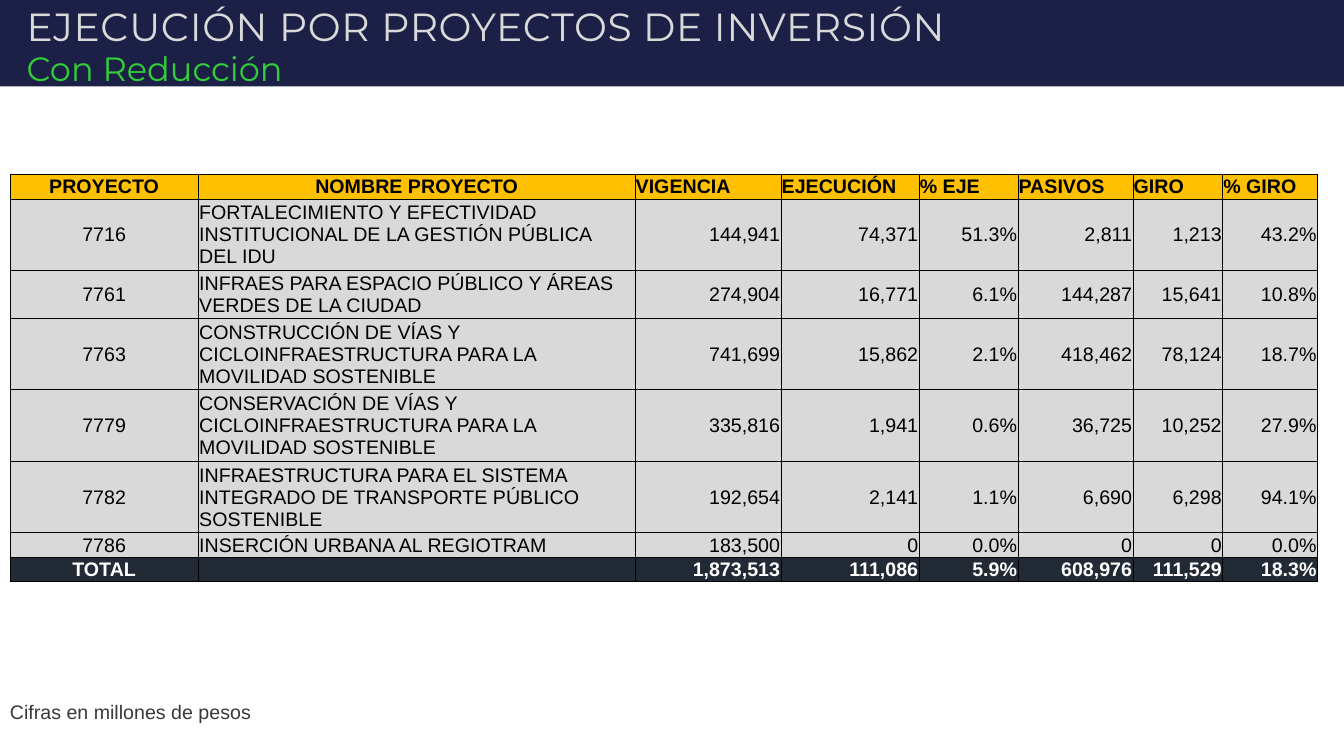
import dataclasses

import lxml.etree
import pptx
import pptx.dml.color
import pptx.enum.shapes
import pptx.enum.text
import pptx.oxml.ns
import pptx.util

Cm = pptx.util.Cm
Pt = pptx.util.Pt
qn = pptx.oxml.ns.qn
ALIGN = pptx.enum.text.PP_ALIGN
MIDDLE = pptx.enum.text.MSO_ANCHOR.MIDDLE


@dataclasses.dataclass(frozen=True)
class Theme:
    """Colours, fonts and type sizes of the slide."""
    band: str = "1C2046"
    title: str = "D9D9D9"
    subtitle: str = "31CE39"
    note: str = "3B3838"
    header_fill: str = "FFC000"
    body_fill: str = "D9D9D9"
    total_fill: str = "222A35"
    dark: str = "000000"
    light: str = "FFFFFF"
    heading_font: str = "Montserrat"
    body_font: str = "Arial"
    title_size: int = 28
    subtitle_size: int = 24
    body_size: int = 14


THEME = Theme()

COLUMN_WIDTHS = (4.75, 11, 3.68, 3.48, 2.49, 2.9, 2.26, 2.39)
ROW_LINES = (1, 3, 2, 3, 3, 3, 1, 1)
ROWS = (
    ("PROYECTO", "NOMBRE PROYECTO", "VIGENCIA", "EJECUCIÓN", "% EJE", "PASIVOS", "GIRO", "% GIRO"),
    ("7716", "FORTALECIMIENTO Y EFECTIVIDAD INSTITUCIONAL DE LA GESTIÓN PÚBLICA DEL IDU",
     "144,941", "74,371", "51.3%", "2,811", "1,213", "43.2%"),
    ("7761", "INFRAES PARA ESPACIO PÚBLICO Y ÁREAS VERDES DE LA CIUDAD",
     "274,904", "16,771", "6.1%", "144,287", "15,641", "10.8%"),
    ("7763", "CONSTRUCCIÓN DE VÍAS Y CICLOINFRAESTRUCTURA PARA LA MOVILIDAD SOSTENIBLE",
     "741,699", "15,862", "2.1%", "418,462", "78,124", "18.7%"),
    ("7779", "CONSERVACIÓN DE VÍAS Y CICLOINFRAESTRUCTURA PARA LA MOVILIDAD SOSTENIBLE",
     "335,816", "1,941", "0.6%", "36,725", "10,252", "27.9%"),
    ("7782", "INFRAESTRUCTURA PARA EL SISTEMA INTEGRADO DE TRANSPORTE PÚBLICO SOSTENIBLE",
     "192,654", "2,141", "1.1%", "6,690", "6,298", "94.1%"),
    ("7786", "INSERCIÓN URBANA AL REGIOTRAM", "183,500", "0", "0.0%", "0", "0", "0.0%"),
    ("TOTAL", "", "1,873,513", "111,086", "5.9%", "608,976", "111,529", "18.3%"),
)


def rgb(colour):
    """Turn a hex string into a colour."""
    return pptx.dml.color.RGBColor.from_string(colour)


def add_run(p, text, font, size, colour, bold=False):
    """Add one formatted run to a paragraph."""
    r = p.add_run()
    r.text = text
    r.font.name = font
    r.font.size = Pt(size)
    r.font.bold = bold
    r.font.color.rgb = rgb(colour)
    return r


def add_band(slide, width, height):
    """Draw the dark band across the top."""
    sp = slide.shapes.add_shape(pptx.enum.shapes.MSO_SHAPE.RECTANGLE, 0, 0, width, height)
    sp.shadow.inherit = False
    sp.fill.solid()
    sp.fill.fore_color.rgb = rgb(THEME.band)
    sp.line.fill.background()


def add_text(slide, box, text, font, size, colour):
    """Add a wrapping one-line text box and return its frame and run."""
    tf = slide.shapes.add_textbox(*(Cm(v) for v in box)).text_frame
    tf.word_wrap = True
    tf.auto_size = pptx.enum.text.MSO_AUTO_SIZE.SHAPE_TO_FIT_TEXT
    return tf, add_run(tf.paragraphs[0], text, font, size, colour)


def add_heading(slide, box, text, size, colour):
    """Add a tight heading line on the band."""
    tf, r = add_text(slide, box, text, THEME.heading_font, size, colour)
    tf.vertical_anchor = MIDDLE
    tf.margin_left = tf.margin_top = Cm(0.03)
    tf.margin_right = tf.margin_bottom = 0
    return tf, r


def add_borders(cell):
    """Draw thin lines on the four sides of a cell."""
    tc_pr = cell._tc.get_or_add_tcPr()
    for side in ("a:lnL", "a:lnR", "a:lnT", "a:lnB"):
        ln = lxml.etree.SubElement(tc_pr, qn(side), w=str(Pt(0.5)))
        fill = lxml.etree.SubElement(ln, qn("a:solidFill"))
        lxml.etree.SubElement(fill, qn("a:srgbClr"), val=THEME.dark)


def fill_cell(cell, text, align, fill, colour, bold):
    """Format one table cell and write its text."""
    add_borders(cell)
    cell.fill.solid()
    cell.fill.fore_color.rgb = rgb(fill)
    cell.vertical_anchor = MIDDLE
    cell.margin_left = cell.margin_right = cell.margin_top = Cm(0.02)
    cell.margin_bottom = 0
    p = cell.text_frame.paragraphs[0]
    p.alignment = align
    if text:
        add_run(p, text, THEME.body_font, THEME.body_size, colour, bold)
    else:
        lxml.etree.SubElement(p._p, qn("a:endParaRPr"), sz=str(THEME.body_size * 100))


def cell_align(row, column):
    """Choose the alignment of a cell by its place."""
    if column == 0 or (row == 0 and column == 1):
        return ALIGN.CENTER
    return ALIGN.LEFT if row == 0 or column == 1 else ALIGN.RIGHT


def add_projects_table(slide, left, top):
    """Add the table of investment projects."""
    heights = [0.59 * lines + 0.03 for lines in ROW_LINES]
    table = slide.shapes.add_table(
        len(ROWS), len(COLUMN_WIDTHS), Cm(left), Cm(top),
        Cm(sum(COLUMN_WIDTHS)), Cm(sum(heights))).table
    table.first_row = table.horz_banding = False
    for column, width in zip(table.columns, COLUMN_WIDTHS):
        column.width = Cm(width)
    for row, height in zip(table.rows, heights):
        row.height = Cm(height)
    last = len(ROWS) - 1
    styles = {0: (THEME.header_fill, THEME.dark, True), last: (THEME.total_fill, THEME.light, True)}
    for i, values in enumerate(ROWS):
        style = styles.get(i, (THEME.body_fill, THEME.dark, False))
        for j, text in enumerate(values):
            fill_cell(table.cell(i, j), text, cell_align(i, j), *style)


def main():
    """Build and save the slide."""
    prs = pptx.Presentation()
    prs.slide_width, prs.slide_height = Cm(33.87), Cm(19.05)
    slide = prs.slides.add_slide(prs.slide_layouts[6])
    add_band(slide, prs.slide_width, Cm(2.18))
    add_heading(slide, (0.64, 1.17, 32.16, 1.07), "Con Reducción",
                THEME.subtitle_size, THEME.subtitle)
    tf, r = add_heading(slide, (0.64, 0.15, 27.2, 1.12), "EJECUCIÓN POR PROYECTOS DE INVERSIÓN",
                        THEME.title_size, THEME.title)
    tf.paragraphs[0].line_spacing = 0.9
    r.font._element.set("spc", "50")
    add_text(slide, (0, 17.5, 7.16, 0.86), "Cifras en millones de pesos",
             THEME.body_font, THEME.body_size, THEME.note)
    add_projects_table(slide, 0.25, 4.39)
    prs.save("out.pptx")


if __name__ == "__main__":
    main()
